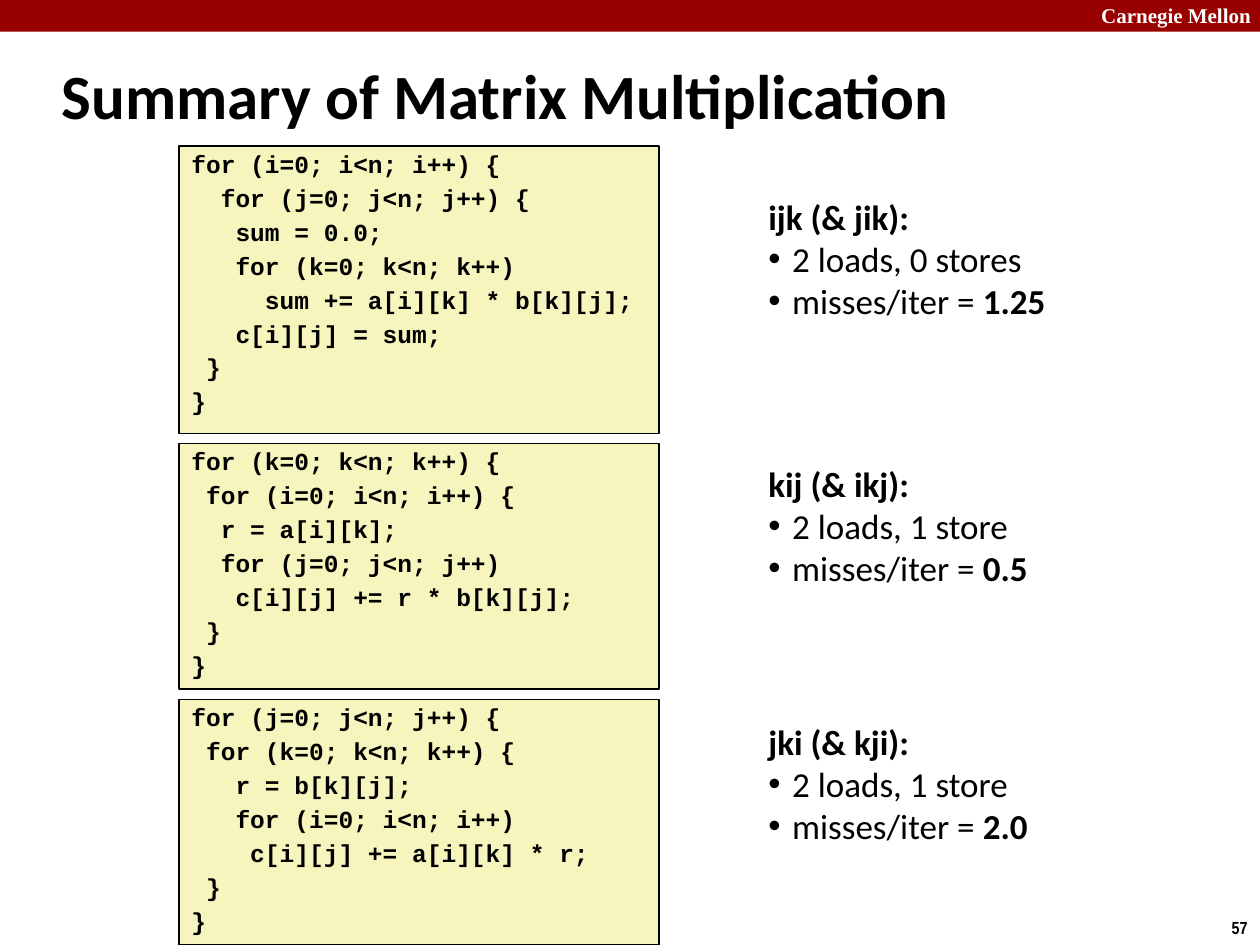
from lxml import etree
from pptx import Presentation
from pptx import util as u
from pptx.dml.color import RGBColor
from pptx.enum import shapes, text
from pptx.oxml.ns import qn

BLACK = RGBColor(0, 0, 0)
WHITE = RGBColor(255, 255, 255)
RED = RGBColor(0x99, 0, 0)
CREAM = RGBColor(0xF6, 0xF5, 0xBD)

CODE_IJK = """for (i=0; i<n; i++) {
  for (j=0; j<n; j++) {
   sum = 0.0;
   for (k=0; k<n; k++)
     sum += a[i][k] * b[k][j];
   c[i][j] = sum;
 }
}"""
CODE_KIJ = """for (k=0; k<n; k++) {
 for (i=0; i<n; i++) {
  r = a[i][k];
  for (j=0; j<n; j++)
   c[i][j] += r * b[k][j];
 }
}"""
CODE_JKI = """for (j=0; j<n; j++) {
 for (k=0; k<n; k++) {
   r = b[k][j];
   for (i=0; i<n; i++)
    c[i][j] += a[i][k] * r;
 }
}"""


def add_span(para, words, font="Calibri", size=20, color=BLACK, bold=False):
    span = para.add_run()
    span.text = words
    span.font.name = font
    span.font.size = u.Pt(size)
    span.font.color.rgb = color
    span.font.bold = bold
    return span


def next_para(frame, index):
    return frame.paragraphs[0] if index == 0 else frame.add_paragraph()


class SlideBuilder:
    def __init__(self, deck):
        self.page = deck.slides.add_slide(deck.slide_layouts[5])

    def rectangle(self, left, top, width, height, fill, line=None):
        box = self.page.shapes.add_shape(
            shapes.MSO_SHAPE.RECTANGLE,
            u.Cm(left), u.Cm(top), u.Cm(width), u.Cm(height))
        box.shadow.inherit = False
        box.fill.solid()
        box.fill.fore_color.rgb = fill
        if line is None:
            box.line.fill.background()
        else:
            box.line.color.rgb = line
            box.line.width = u.Pt(1)
        return box

    def text_box(self, left, top, width, height, wrap=True):
        box = self.page.shapes.add_textbox(
            u.Cm(left), u.Cm(top), u.Cm(width), u.Cm(height))
        box.text_frame.word_wrap = wrap
        return box.text_frame

    def title(self, words):
        box = self.page.shapes.title
        box.left, box.top = u.Cm(0.99), u.Cm(0.84)
        box.width, box.height = u.Cm(21.08), u.Cm(2.11)
        frame = box.text_frame
        frame.vertical_anchor = text.MSO_ANCHOR.MIDDLE
        para = frame.paragraphs[0]
        para.alignment = text.PP_ALIGN.LEFT
        add_span(para, words, size=36, bold=True)

    def label(self, words, left, top, width, height, align, **style):
        frame = self.text_box(left, top, width, height)
        para = frame.paragraphs[0]
        para.alignment = align
        add_span(para, words, bold=True, **style)

    def code(self, listing, top, height):
        box = self.rectangle(3.61, top, 9.68, height, CREAM, BLACK)
        frame = box.text_frame
        frame.word_wrap = True
        frame.vertical_anchor = text.MSO_ANCHOR.TOP
        frame.margin_top = u.Cm(0.22)
        for index, row in enumerate(listing.splitlines()):
            para = next_para(frame, index)
            para.alignment = text.PP_ALIGN.LEFT
            para.line_spacing = 0.7
            if index:
                para.space_before = u.Pt(7.6)
            add_span(para, row, font="Courier New", size=14, bold=True)

    def cost_summary(self, heading, accesses, misses, top):
        frame = self.text_box(15.24, top, 6.45, 2.82, wrap=False)
        rows = [[(heading, True)], [(accesses, False)],
                [("misses/iter = ", False), (misses, True)]]
        for index, row in enumerate(rows):
            para = next_para(frame, index)
            para.alignment = text.PP_ALIGN.LEFT
            if index:
                self.bullet(para)
            for words, bold in row:
                add_span(para, words, bold=bold)

    def bullet(self, para):
        properties = para._p.get_or_add_pPr()
        properties.set("marL", str(u.Cm(0.48)))
        properties.set("indent", str(-u.Cm(0.48)))
        etree.SubElement(properties, qn("a:buFont")).set("typeface", "Arial")
        etree.SubElement(properties, qn("a:buChar")).set("char", "•")


def main():
    deck = Presentation()
    deck.slide_width, deck.slide_height = u.Cm(25.4), u.Cm(19.05)
    slide = SlideBuilder(deck)
    slide.rectangle(0, 0, 25.4, 0.64, RED)
    slide.label("Carnegie Mellon", 21.95, -0.08, 3.63, 0.76,
                text.PP_ALIGN.LEFT, font="Times New Roman", size=12, color=WHITE)
    slide.label("57", 24.28, 18.36, 1.12, 0.69,
                text.PP_ALIGN.RIGHT, font="Arial Narrow", size=10)
    slide.title("Summary of Matrix Multiplication")
    variants = [
        (CODE_IJK, 2.95, 5.79, "ijk (& jik):", "2 loads, 0 stores", "1.25", 3.81),
        (CODE_KIJ, 8.94, 4.95, "kij (& ikj):", "2 loads, 1 store", "0.5", 9.19),
        (CODE_JKI, 14.1, 4.95, "jki (& kji):", "2 loads, 1 store", "2.0", 14.4),
    ]
    for listing, top, height, heading, accesses, misses, summary_top in variants:
        slide.code(listing, top, height)
        slide.cost_summary(heading, accesses, misses, summary_top)
    deck.save("out.pptx")


if __name__ == "__main__":
    main()
